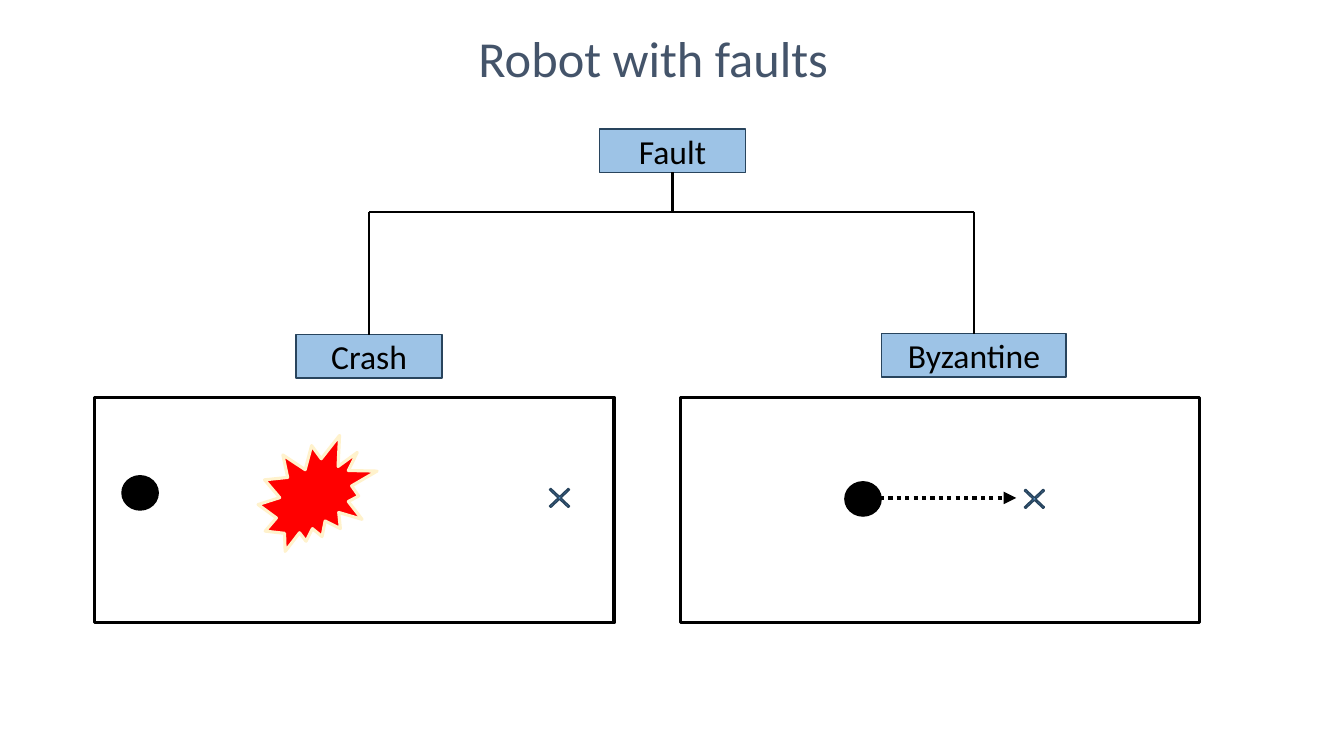
from pptx import Presentation
from pptx.dml.color import RGBColor
from pptx.enum import dml, shapes, text
from pptx.oxml.ns import qn
from pptx.util import Inches, Pt
from lxml import etree

BLACK = RGBColor(0x00, 0x00, 0x00)
SLATE = RGBColor(0x44, 0x54, 0x6A)
SKY = RGBColor(0x9D, 0xC3, 0xE6)
BLUE = RGBColor(0x5B, 0x9B, 0xD5)
NAVY = RGBColor(0x28, 0x44, 0x5D)
RED = RGBColor(0xFF, 0x00, 0x00)
CREAM = RGBColor(0xFF, 0xF2, 0xCC)

FONT = "Calibri"
KIND = shapes.MSO_SHAPE
BAR_Y = 2.1
MARK = (0.36, 0.34)


def add_form(slide, kind, x, y, w, h, fill, edge, width=1):
    form = slide.shapes.add_shape(kind, Inches(x), Inches(y), Inches(w), Inches(h))
    form.shadow.inherit = False
    if fill is None:
        form.fill.background()
    else:
        form.fill.solid()
        form.fill.fore_color.rgb = fill
    form.line.color.rgb = edge
    form.line.width = Pt(width)
    return form


def set_text(form, words, size, color):
    frame = form.text_frame
    frame.word_wrap = True
    frame.vertical_anchor = text.MSO_ANCHOR.MIDDLE
    frame.text = words
    para = frame.paragraphs[0]
    para.alignment = text.PP_ALIGN.CENTER
    para.font.name = FONT
    para.font.size = Pt(size)
    para.font.color.rgb = color


def add_title(slide, words):
    title = slide.shapes.title
    title.left, title.top = Inches(1.06), Inches(0.26)
    title.width, title.height = Inches(10.84), Inches(0.62)
    set_text(title, words, 36, SLATE)


def add_label(slide, words, mid, y, w=1.45):
    label = add_form(slide, KIND.RECTANGLE, mid - w / 2, y, w, 0.43, SKY, NAVY)
    set_text(label, words, 24, BLACK)
    return label


def add_line(slide, x1, y1, x2, y2, width=1.5):
    line = slide.shapes.add_connector(
        shapes.MSO_CONNECTOR.STRAIGHT, Inches(x1), Inches(y1), Inches(x2), Inches(y2))
    line.line.color.rgb = BLACK
    line.line.width = Pt(width)
    etree.SubElement(line._element.spPr, qn("a:effectLst"))
    return line


def add_arrow(slide, x1, x2, y):
    arrow = add_line(slide, x1, y, x2, y, 3)
    arrow.line.dash_style = dml.MSO_LINE.ROUND_DOT
    tail = etree.SubElement(arrow.line._get_or_add_ln(), qn("a:tailEnd"))
    tail.set("type", "triangle")


def add_robot(slide, x, y):
    add_form(slide, KIND.OVAL, x, y, *MARK, BLACK, BLACK)


def add_goal(slide, x, y):
    goal = add_form(slide, KIND.MATH_MULTIPLY, x, y, *MARK, BLUE, NAVY)
    goal.adjustments[0] = 0.055


def add_tree(slide):
    root, left, right = 6.67, 3.66, 9.66
    # Root and its stem
    fault = add_label(slide, "Fault", root, 1.28)
    stem = add_line(slide, root, 1.71, root, BAR_Y)
    stem.begin_connect(fault, 2)
    add_line(slide, left, BAR_Y, right, BAR_Y)
    # Branches
    for words, mid, y, w in (("Crash", left, 3.32, 1.45),
                             ("Byzantine", right, 3.31, 1.83)):
        label = add_label(slide, words, mid, y, w)
        drop = add_line(slide, mid, BAR_Y, mid, y)
        drop.end_connect(label, 0)


def main():
    deck = Presentation()
    deck.slide_width, deck.slide_height = Inches(13.33), Inches(7.5)
    slide = deck.slides.add_slide(deck.slide_layouts[5])

    add_title(slide, "Robot with faults")
    add_tree(slide)

    # Frames
    for x in (0.94, 6.75):
        add_form(slide, KIND.RECTANGLE, x, 3.94, 5.15, 2.24, None, BLACK, 2.25)

    # Crash scene
    add_form(slide, KIND.EXPLOSION2, 2.56, 4.32, 1.18, 1.15, RED, CREAM, 2.25)
    add_robot(slide, 1.21, 4.72)
    add_goal(slide, 5.37, 4.77)

    # Byzantine scene
    add_robot(slide, 8.38, 4.78)
    add_goal(slide, 10.08, 4.78)
    add_arrow(slide, 8.56, 10.08, 4.94)

    deck.save("out.pptx")


if __name__ == "__main__":
    main()
